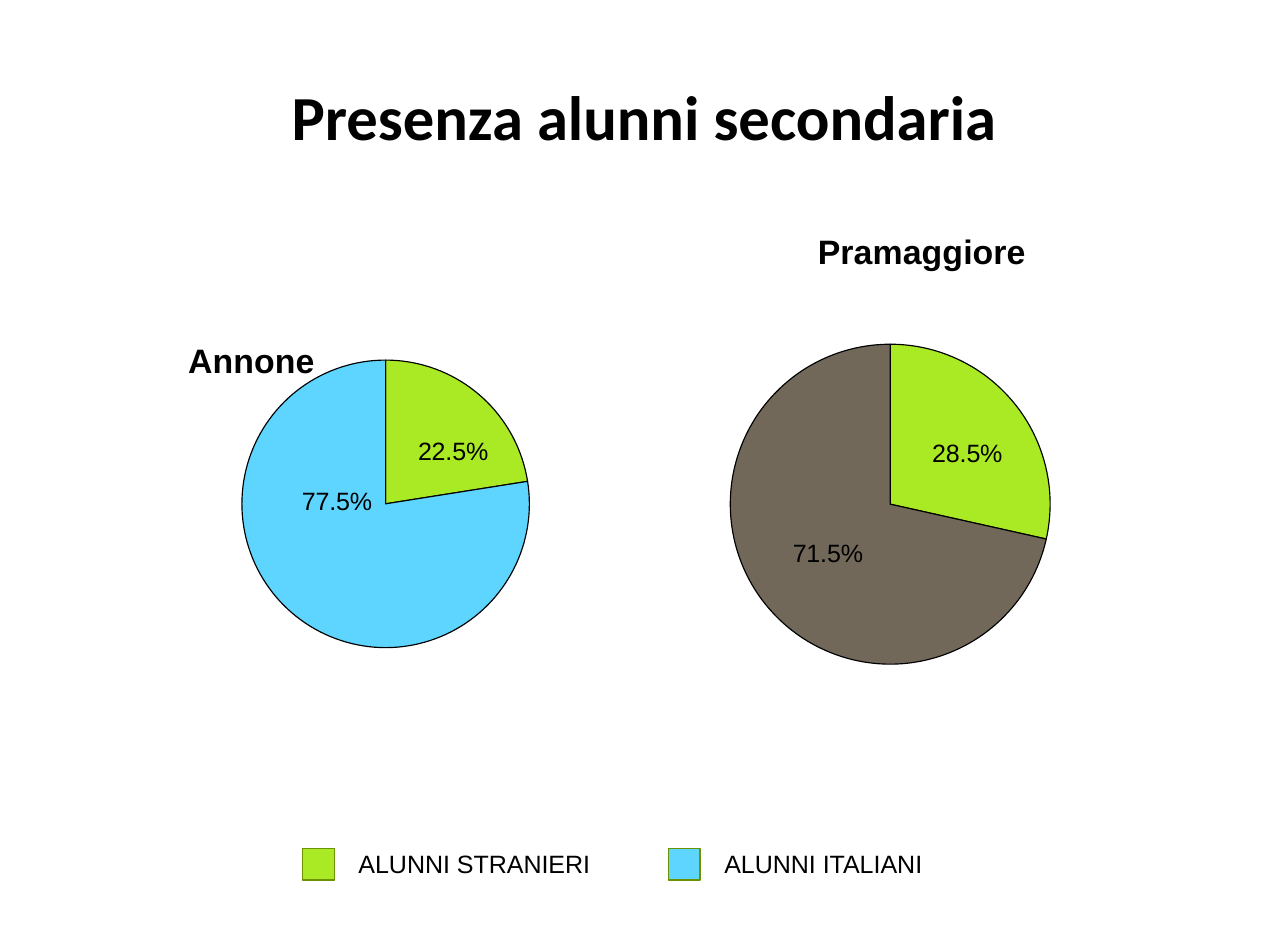
from lxml.etree import SubElement
from pptx import Presentation
from pptx.chart.data import CategoryChartData
from pptx.dml.color import RGBColor
from pptx.enum.chart import XL_CHART_TYPE, XL_LABEL_POSITION
from pptx.enum.shapes import MSO_SHAPE
from pptx.enum.text import MSO_ANCHOR, PP_ALIGN
from pptx.oxml.ns import qn
from pptx.util import Inches, Pt

WIDTH, HEIGHT = Inches(11.42), Inches(8.27)
COLORS = {"text": "000000", "green": "AAEA25", "blue": "5DD5FF",
          "brown": "71685A", "key_line": "6D9200"}

# Text formats
HEADING = {"name": "Calibri", "size": Pt(40), "bold": True}
CHART_TITLE = {"name": "Arial", "size": Pt(21.6), "bold": True}
BODY = {"name": "Arial", "size": Pt(16), "bold": False}

# Pies: title, plot and label places are percentages of the chart's frame
PIES = [
    {"name": "Annone", "col": 14.1, "values": (0.225, 0.775),
     "fills": ("green", "blue"), "title": (0.1, 26.65),
     "plot": (14.8, 31.4, 70.7, 50.3), "labels": ((5.1, 0.5), (-0.5, -10))},
    {"name": "Pramaggiore", "col": 55.5, "values": (0.285, 0.715),
     "fills": ("green", "brown"), "title": (23.8, 7.55),
     "plot": (3.8, 28.6, 78.6, 56), "labels": ((3.6, 0), (0, -0.1))},
]
LEGEND = [("ALUNNI STRANIERI", "green", 23.5),
          ("ALUNNI ITALIANI", "blue", 51.9)]


def grid(col, row, cols, rows):
    """Turn places on a grid of 100 columns and 100 rows into lengths."""
    return [int(WIDTH * col / 100), int(HEIGHT * row / 100),
            int(WIDTH * cols / 100), int(HEIGHT * rows / 100)]


def rgb(name):
    return RGBColor.from_string(COLORS[name])


def style(font, fmt):
    for key, value in fmt.items():
        setattr(font, key, value)
    font.color.rgb = rgb("text")


def outline(line, color, width):
    line.color.rgb = rgb(color)
    line.width = Pt(width)


def set_layout(parent, index, place, inner=False):
    """Give a chart part a manual layout, in percentages."""
    for old in parent.findall(qn("c:layout")):
        parent.remove(old)
    layout = SubElement(parent, qn("c:layout"))
    parent.insert(index, layout)
    manual = SubElement(layout, qn("c:manualLayout"))
    if inner:
        SubElement(manual, qn("c:layoutTarget")).set("val", "inner")
    if parent.tag != qn("c:dLbl"):
        for mode in ("c:xMode", "c:yMode"):
            SubElement(manual, qn(mode)).set("val", "edge")
    for tag, share in zip(("c:x", "c:y", "c:w", "c:h"), place):
        SubElement(manual, qn(tag)).set("val", str(round(share / 100, 4)))


def add_heading(s, text):
    sp = s.shapes.title
    sp.left, sp.top, sp.width, sp.height = grid(5, 4, 90, 16.7)
    tf = sp.text_frame
    tf.vertical_anchor = MSO_ANCHOR.MIDDLE
    p = tf.paragraphs[0]
    p.alignment = PP_ALIGN.CENTER
    r = p.add_run()
    r.text = text
    style(r.font, HEADING)


def add_pie(s, pie):
    data = CategoryChartData(number_format="0.0%")
    data.categories = ["1", "2"]
    data.add_series(pie["name"], pie["values"])
    frame = s.shapes.add_chart(XL_CHART_TYPE.PIE,
                               *grid(pie["col"], 19.35, 31.6, 61.3), data)
    chart = frame.chart
    chart.has_legend = False
    style(chart.font, BODY)

    # Title and plot
    chart.has_title = True
    title = chart.chart_title
    r = title.text_frame.paragraphs[0].add_run()
    r.text = pie["name"]
    style(r.font, CHART_TITLE)
    set_layout(title._element, 1, pie["title"])
    plot = chart.plots[0]
    plot.vary_by_categories = True
    set_layout(plot._element.getparent(), 0, pie["plot"], inner=True)

    # Labels
    series = plot.series[0]
    labels = series.data_labels
    labels.show_value = True
    labels.show_percentage = False
    labels.number_format = "0.0%"
    labels.number_format_is_linked = False
    labels.position = XL_LABEL_POSITION.CENTER
    style(labels.font, BODY)

    # Slices
    for i, (fill, offset) in enumerate(zip(pie["fills"], pie["labels"])):
        point = series.points[i]
        point.format.fill.solid()
        point.format.fill.fore_color.rgb = rgb(fill)
        outline(point.format.line, "text", 0.75)
        label = point.data_label
        style(label.font, BODY)
        label.position = XL_LABEL_POSITION.CENTER
        set_layout(labels._element.findall(qn("c:dLbl"))[i], 1, offset)


def add_legend_entry(s, text, fill, col):
    key = s.shapes.add_shape(MSO_SHAPE.RECTANGLE,
                             *grid(col, 90.95, 2.45, 3.39))
    key.shadow.inherit = False
    key.fill.solid()
    key.fill.fore_color.rgb = rgb(fill)
    outline(key.line, "key_line", 0.85)
    tf = s.shapes.add_textbox(*grid(col + 3.47, 90.3, 26.9, 4.5)).text_frame
    tf.word_wrap = True
    r = tf.paragraphs[0].add_run()
    r.text = text
    style(r.font, BODY)


def main():
    prs = Presentation()
    prs.slide_width, prs.slide_height = WIDTH, HEIGHT
    s = prs.slides.add_slide(prs.slide_layouts[5])
    add_heading(s, "Presenza alunni secondaria")
    for pie in PIES:
        add_pie(s, pie)
    for entry in LEGEND:
        add_legend_entry(s, *entry)
    prs.save("out.pptx")


if __name__ == "__main__":
    main()
